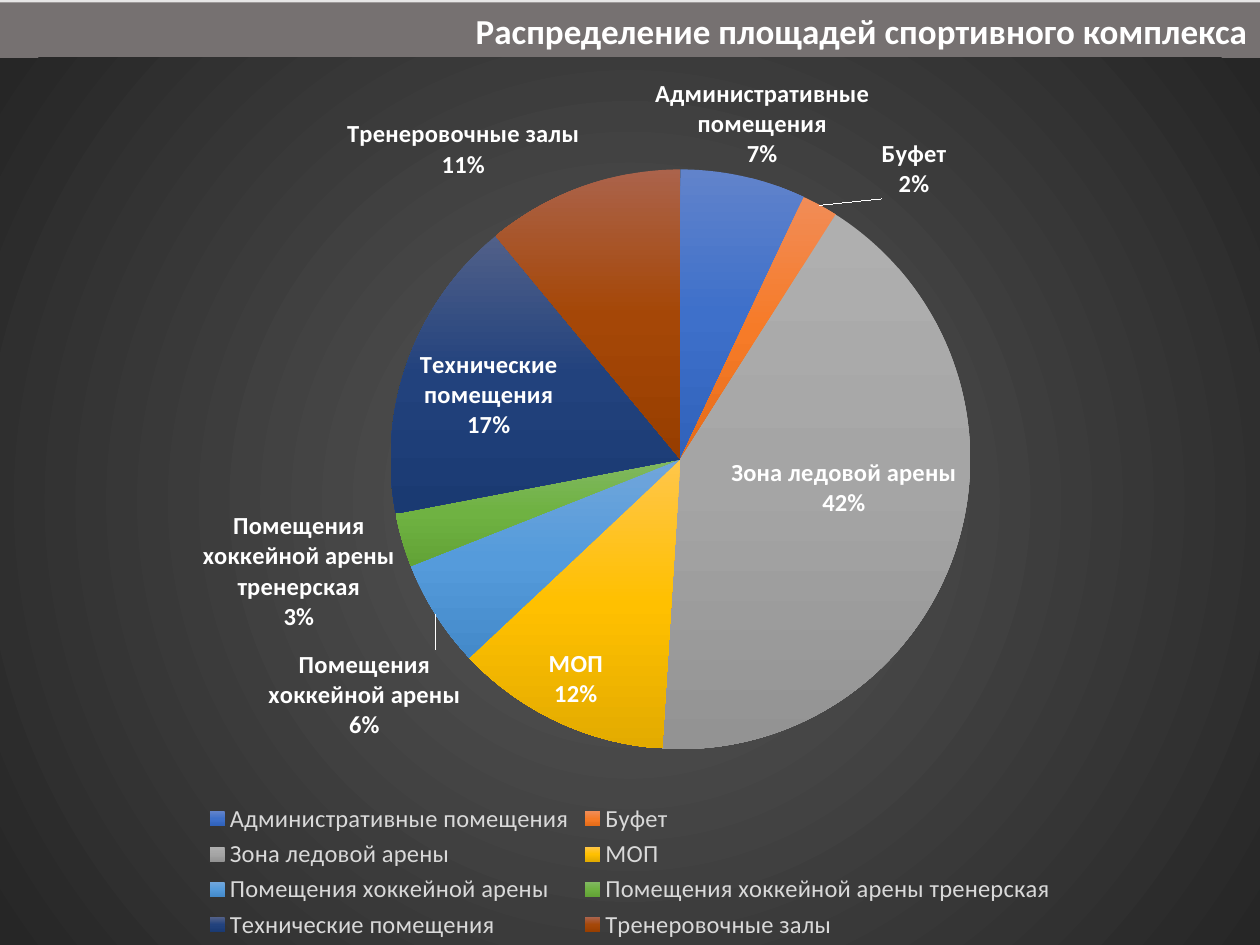
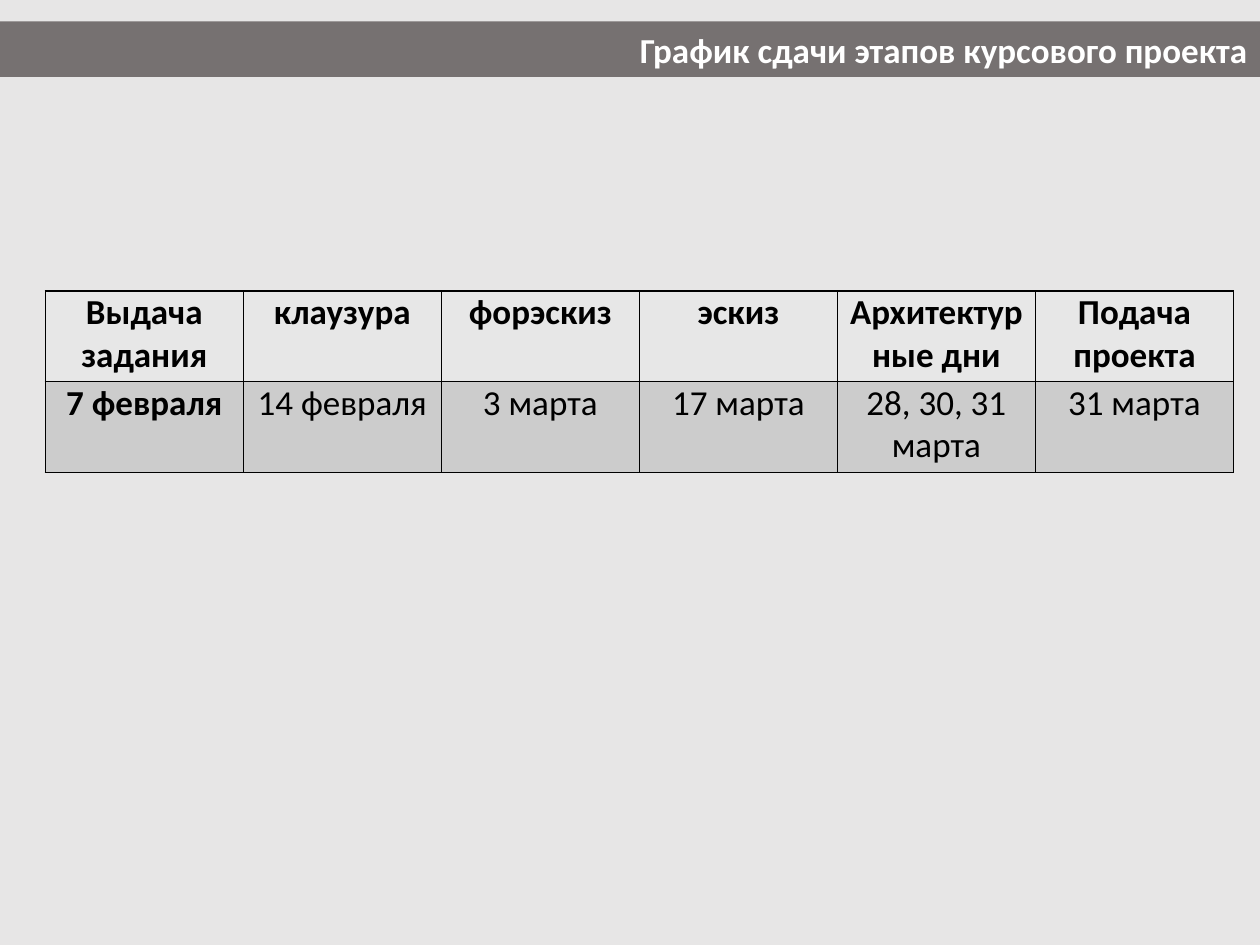
from lxml import etree
from pptx import Presentation
from pptx.chart.data import CategoryChartData
from pptx.dml.color import RGBColor
from pptx.enum.chart import XL_CHART_TYPE, XL_LABEL_POSITION, XL_LEGEND_POSITION
from pptx.enum.shapes import MSO_SHAPE
from pptx.enum.text import MSO_ANCHOR, MSO_AUTO_SIZE, PP_ALIGN
from pptx.oxml import parse_xml
from pptx.oxml.ns import nsdecls, qn
from pptx.util import Inches, Pt

PIE = XL_CHART_TYPE.PIE
BEST_FIT = XL_LABEL_POSITION.BEST_FIT
BOTTOM = XL_LEGEND_POSITION.BOTTOM
RECTANGLE = MSO_SHAPE.RECTANGLE
MIDDLE = MSO_ANCHOR.MIDDLE
GROW = MSO_AUTO_SIZE.SHAPE_TO_FIT_TEXT
RIGHT, CENTER = PP_ALIGN.RIGHT, PP_ALIGN.CENTER

FONT = "Calibri"
WIDTH, HEIGHT = Inches(10), Inches(7.5)
BAND_HEIGHT = Inches(0.44)

PAPER = RGBColor(0xE7, 0xE6, 0xE6)
BAND = RGBColor(0x76, 0x71, 0x71)
WHITE = RGBColor(0xFF, 0xFF, 0xFF)
BLACK = RGBColor(0x00, 0x00, 0x00)
LEGEND_TEXT = RGBColor(0xD9, 0xD9, 0xD9)
HEADER_FILL = RGBColor(0xE7, 0xE7, 0xE7)
DATE_FILL = RGBColor(0xCC, 0xCC, 0xCC)
GLOW = (RGBColor(0x59, 0x59, 0x59), RGBColor(0x26, 0x26, 0x26))


def shades(*codes):
    """Turn hex codes into the colours of a gradient."""
    return [RGBColor.from_string(code) for code in codes]


AREAS = [
    ("Административные помещения", 7, shades("6183CB", "3E70CA", "3062BB")),
    ("Буфет", 2, shades("F18C57", "F67B28", "E56C19")),
    ("Зона ледовой арены", 42, shades("AFAFAF", "A5A5A5", "939393")),
    ("МОП", 12, shades("FFC64B", "FFC000", "E3AB00")),
    ("Помещения хоккейной арены", 6, shades("71A6DB", "559BDB", "448ACA")),
    ("Помещения хоккейной арены тренерская", 3, shades("81B861", "6FB242", "62A336")),
    ("Технические помещения", 17, shades("516089", "22427D", "1A3A72")),
    ("Тренеровочные залы", 11, shades("AB634B", "A54707", "983E00")),
]

STAGES = [
    ("Выдача задания", "7 февраля"),
    ("клаузура", "14 февраля"),
    ("форэскиз", "3 марта"),
    ("эскиз", "17 марта"),
    ("Архитектурные дни", "28, 30, 31 марта"),
    ("Подача проекта", "31 марта"),
]


def style_font(font, size, color, bold=False):
    """Apply the shared typeface with a size, colour and weight."""
    font.name, font.size, font.bold = FONT, Pt(size), bold
    font.color.rgb = color


def add_titled_slide(prs, title, top):
    """Add a blank slide with the full-width title band."""
    slide = prs.slides.add_slide(prs.slide_layouts[6])
    band = slide.shapes.add_shape(RECTANGLE, 0, top, WIDTH, BAND_HEIGHT)
    band.shadow.inherit = False
    band.fill.solid()
    band.fill.fore_color.rgb = BAND
    band.line.fill.background()
    frame = band.text_frame
    frame.word_wrap, frame.auto_size = True, GROW
    frame.vertical_anchor = MIDDLE
    heading = frame.paragraphs[0]
    heading.text, heading.alignment = title, RIGHT
    style_font(heading.font, 20, WHITE, bold=True)
    return slide


def gradient(colors, direction):
    """Build a gradient fill with evenly spaced stops."""
    step = 100000 // (len(colors) - 1)
    stops = "".join(
        f'<a:gs pos="{i * step}"><a:srgbClr val="{color}"/></a:gs>'
        for i, color in enumerate(colors))
    return parse_xml(f'<a:gradFill {nsdecls("a")} rotWithShape="1">'
                     f"<a:gsLst>{stops}</a:gsLst>{direction}</a:gradFill>")


def place(part, index, x, y, w, h):
    """Fix a chart part at shares of the chart's size."""
    for old in part.findall(qn("c:layout")):
        part.remove(old)
    target = '<c:layoutTarget val="inner"/>' if part.tag == qn("c:plotArea") else ""
    sizes = "".join(f'<c:{key} val="{share}"/>'
                    for key, share in zip("xywh", (x, y, w, h)))
    part.insert(index, parse_xml(
        f'<c:layout {nsdecls("c")}><c:manualLayout>{target}'
        f'<c:xMode val="edge"/><c:yMode val="edge"/>{sizes}'
        "</c:manualLayout></c:layout>"))


def paint_backdrop(chart):
    """Give the chart a dark radial backdrop without an outline."""
    backdrop = parse_xml(f'<c:spPr {nsdecls("c", "a")}><a:ln><a:noFill/></a:ln></c:spPr>')
    center = ('<a:path path="circle"><a:fillToRect l="50000" t="50000" '
              'r="50000" b="50000"/></a:path>')
    backdrop.insert(0, gradient(GLOW, center))
    chart._chartSpace.find(qn("c:chart")).addnext(backdrop)


def paint_slices(series):
    """Shade every slice from top to bottom."""
    for i, (_, _, colors) in enumerate(AREAS):
        series.points[i].format.line.fill.background()
        properties = series._element.get_or_add_dPt_for_point(i).get_or_add_spPr()
        properties.insert(0, gradient(colors, '<a:lin ang="5400000" scaled="0"/>'))


def label_slices(series):
    """Show category and percentage on two lines at each slice."""
    labels = series.data_labels
    style_font(labels.font, 14, WHITE, bold=True)
    labels.number_format, labels.number_format_is_linked = "0%", False
    labels.position = BEST_FIT
    labels.show_value = False
    labels.show_category_name = labels.show_percentage = True
    separator = etree.Element(qn("c:separator"))
    separator.text = "\n"
    labels._element.find(qn("c:showBubbleSize")).addnext(separator)


def add_area_pie(slide):
    """Add the pie of floor areas below the title band."""
    data = CategoryChartData()
    data.categories = [name for name, _, _ in AREAS]
    data.add_series("Series 1", [share for _, share, _ in AREAS])
    top = Inches(0.46)
    chart = slide.shapes.add_chart(PIE, 0, top, WIDTH, HEIGHT - top, data).chart
    style_font(chart.font, 10, BLACK)
    chart.has_title = False
    chart.has_legend = True
    chart.legend.position = BOTTOM
    chart.legend.include_in_layout = False
    style_font(chart.legend.font, 14, LEGEND_TEXT)
    pie = chart.plots[0]
    pie.vary_by_categories = True
    paint_slices(pie.series[0])
    label_slices(pie.series[0])
    paint_backdrop(chart)
    place(chart._chartSpace.find(".//" + qn("c:plotArea")), 0, 0.31, 0.125, 0.46, 0.655)
    place(chart.legend._element, 1, 0.16, 0.835, 0.68, 0.165)


def outline_cell(cell):
    """Draw a thin black border on all sides of a cell."""
    properties = cell._tc.get_or_add_tcPr()
    for side in ("lnL", "lnR", "lnT", "lnB"):
        properties.append(parse_xml(
            f'<a:{side} {nsdecls("a")} w="{Pt(1)}"><a:solidFill>'
            f'<a:srgbClr val="{BLACK}"/></a:solidFill></a:{side}>'))


def fill_cell(cell, text, fill, bold):
    """Write centred text into an outlined, filled cell."""
    outline_cell(cell)
    cell.fill.solid()
    cell.fill.fore_color.rgb = fill
    cell.margin_left = cell.margin_right = Inches(0.07)
    cell.margin_top = cell.margin_bottom = 0
    entry = cell.text_frame.paragraphs[0]
    entry.text, entry.alignment = text, CENTER
    style_font(entry.font, 20, BLACK, bold)


def add_schedule(slide):
    """Add the table of project stages and their dates."""
    table = slide.shapes.add_table(2, len(STAGES), Inches(0.36), Inches(2.31),
                                   Inches(9.43), Inches(1.44)).table
    table.first_row = table.horz_banding = False
    for column, (stage, date) in enumerate(STAGES):
        fill_cell(table.cell(0, column), stage, HEADER_FILL, True)
        fill_cell(table.cell(1, column), date, DATE_FILL, column == 0)


def main():
    """Build the two slides and save them."""
    prs = Presentation()
    prs.slide_width, prs.slide_height = WIDTH, HEIGHT
    paper = prs.slide_master.background.fill
    paper.solid()
    paper.fore_color.rgb = PAPER
    add_area_pie(add_titled_slide(
        prs, "Распределение площадей спортивного комплекса", Inches(0.02)))
    add_schedule(add_titled_slide(
        prs, "График сдачи этапов курсового проекта", Inches(0.17)))
    prs.save("out.pptx")


if __name__ == "__main__":
    main()
